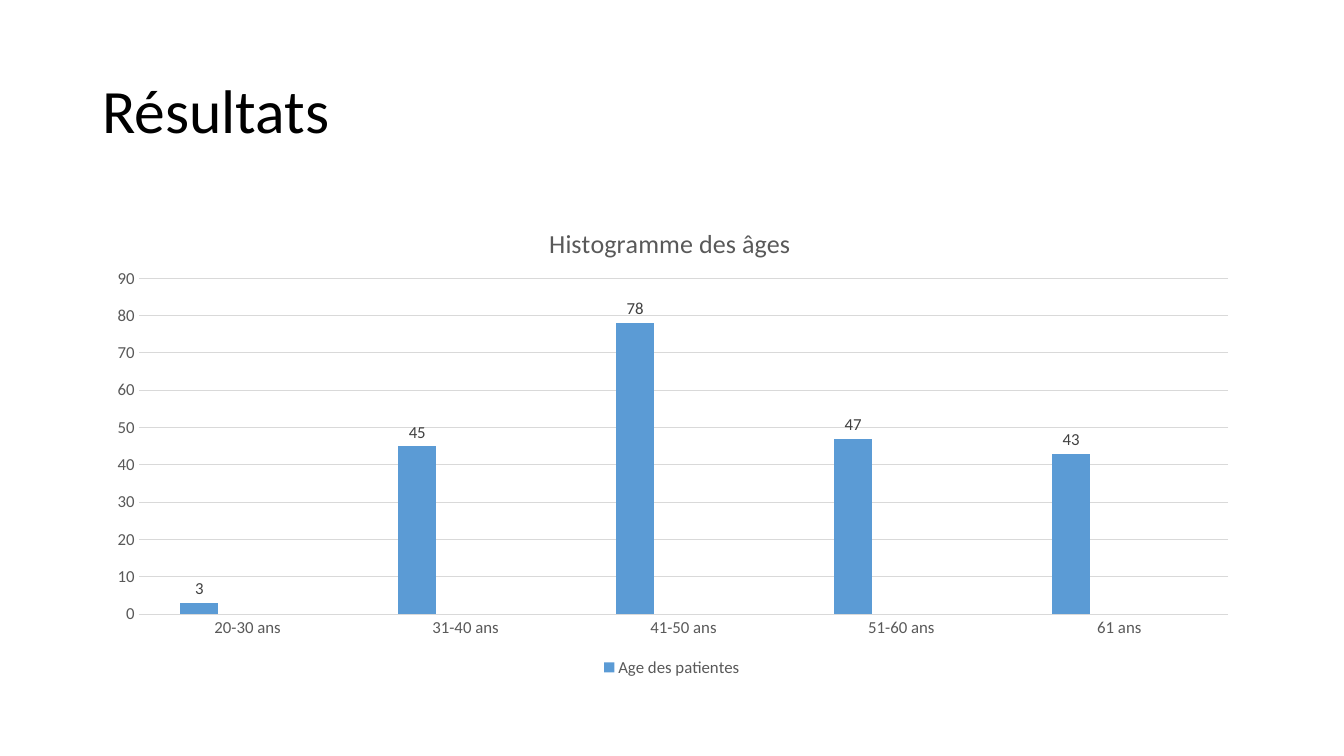
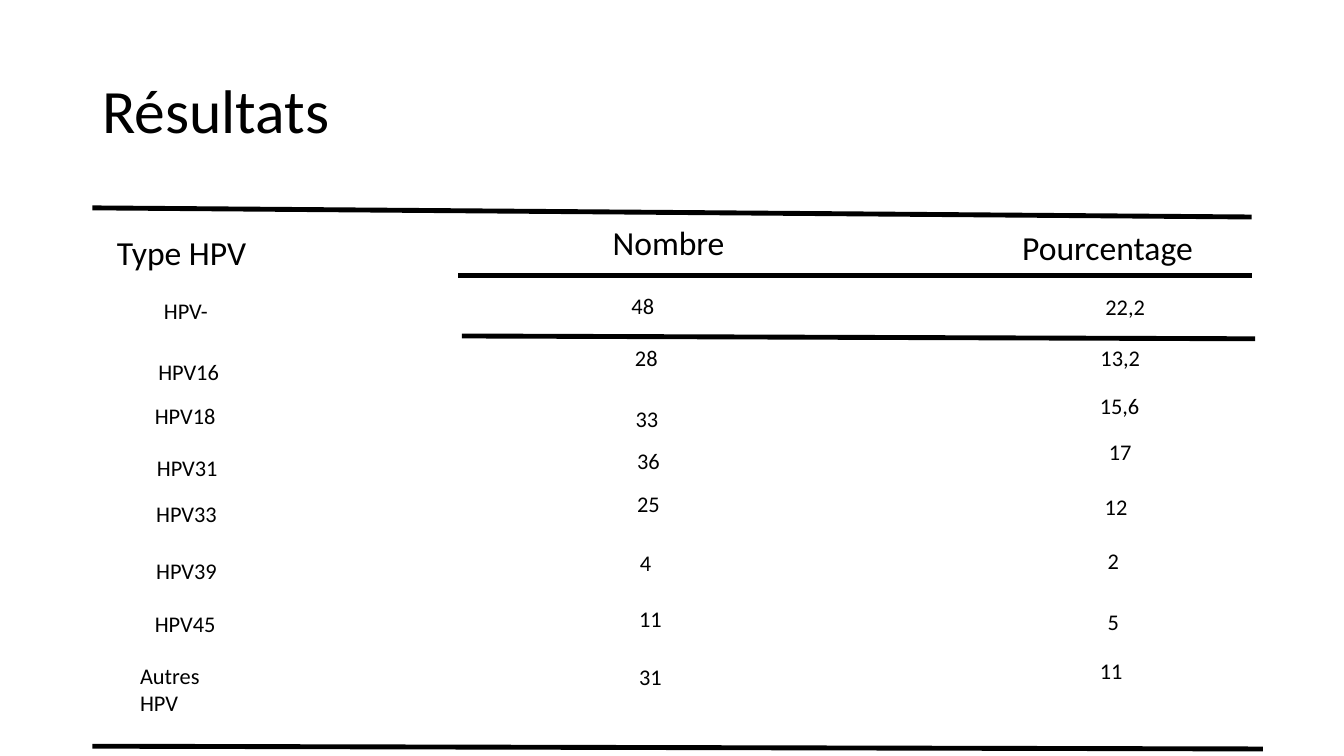
from lxml import etree
from pptx import Presentation
from pptx.chart.data import CategoryChartData
from pptx.dml.color import RGBColor
from pptx.enum.chart import XL_CHART_TYPE as ChartType
from pptx.enum.chart import XL_LABEL_POSITION as LabelPosition
from pptx.enum.chart import XL_LEGEND_POSITION as LegendPosition
from pptx.enum.chart import XL_TICK_MARK as TickMark
from pptx.enum.shapes import MSO_CONNECTOR as Connector
from pptx.enum.text import MSO_ANCHOR as Anchor
from pptx.enum.text import MSO_AUTO_SIZE as AutoSize
from pptx.enum.text import PP_ALIGN as Align
from pptx.oxml import parse_xml
from pptx.oxml.ns import nsdecls, qn
from pptx.util import Pt

# Shared style
FONT = "Calibri"
BLACK, GREY, DARK_GREY, GRID = "000000", "595959", "404040", "D9D9D9"
SERIES_COLOURS = ["5B9BD5", "ED7D31", "A5A5A5"]
LEFT, CONTENT_WIDTH = 66, 828
TITLE_ONLY = 5

# Age histogram
AGES = ["20-30 ans", "31-40 ans", "41-50 ans", "51-60 ans", "61 ans"]
PATIENTS = [3, 45, 78, 47, 43]

# HPV results, hand-placed: heading and values as (text, left, top)
HPV_COLUMNS = [
    (113, 66, ("Type HPV", 76.5, 162), [
        ("HPV-", 110, 209), ("HPV16", 106, 252), ("HPV18", 103.5, 283.5),
        ("HPV31", 105, 321), ("HPV33", 104.5, 353.5),
        ("HPV39", 104.5, 394.5), ("HPV45", 103.5, 432),
        ("Autres HPV", 93, 469.5)]),
    (101, 31, ("Nombre", 430.5, 155), [
        ("48", 444, 205), ("28", 446.5, 242.5), ("33", 447, 286),
        ("36", 448, 316), ("25", 448, 346.5), ("4", 450, 389),
        ("11", 449.5, 429), ("31", 449.5, 470)]),
    (143, 43, ("Pourcentage", 723, 158.5), [
        ("22,2", 782.5, 206), ("13,2", 779, 242.5), ("15,6", 778.5, 276.5),
        ("17", 785, 309.5), ("12", 782, 348.5), ("2", 784, 387.5),
        ("5", 784, 430.5), ("11", 778.5, 466)]),
]
RULES = [
    (LEFT, 148.5, 894, 155),
    (327.5, 196.5, 894, 196.5),
    (330, 240, 896.5, 242),
    (LEFT, 533, 902, 535),
]


def rgb(hex_colour):
    return RGBColor.from_string(hex_colour)


def style_font(font, size, colour):
    font.name, font.size, font.bold = FONT, Pt(size), False
    font.color.rgb = rgb(colour)


def add_run(paragraph, text, size, colour=BLACK):
    run = paragraph.add_run()
    run.text = text
    style_font(run.font, size, colour)


def add_titled_slide(prs, heading):
    slide = prs.slides.add_slide(prs.slide_layouts[TITLE_ONLY])
    title = slide.shapes.title
    title.left, title.top = Pt(LEFT), Pt(28.75)
    title.width, title.height = Pt(CONTENT_WIDTH), Pt(104.4)
    frame = title.text_frame
    frame.vertical_anchor = Anchor.MIDDLE
    paragraph = frame.paragraphs[0]
    paragraph.alignment, paragraph.line_spacing = Align.LEFT, 0.9
    add_run(paragraph, heading, 44)
    return slide


def add_label(slide, text, left, top, width, height, size):
    frame = slide.shapes.add_textbox(
        Pt(left), Pt(top), Pt(width), Pt(height)).text_frame
    frame.word_wrap = False
    frame.auto_size = AutoSize.SHAPE_TO_FIT_TEXT
    add_run(frame.paragraphs[0], text, size)


def add_rule(slide, x1, y1, x2, y2):
    rule = slide.shapes.add_connector(
        Connector.STRAIGHT, Pt(x1), Pt(y1), Pt(x2), Pt(y2))
    rule.line.color.rgb = rgb(BLACK)
    rule.line.width = Pt(3.5)
    etree.SubElement(rule._element.spPr, qn("a:effectLst"))


def manual_layout(target="", **fractions):
    """Build a chart layout from fractions of the chart area."""
    inner = f'<c:layoutTarget val="{target}"/>' if target else ""
    modes = "".join(f'<c:{side}Mode val="edge"/>' for side in "xy")
    sizes = "".join(f'<c:{k} val="{v}"/>' for k, v in fractions.items())
    return parse_xml(f'<c:layout {nsdecls("c")}><c:manualLayout>{inner}'
                     f'{modes}{sizes}</c:manualLayout></c:layout>')


def replace_layout(parent, layout, index):
    for old in parent.findall(qn("c:layout")):
        parent.remove(old)
    parent.insert(index, layout)


def style_axes(chart):
    for axis in (chart.category_axis, chart.value_axis):
        axis.major_tick_mark = axis.minor_tick_mark = TickMark.NONE
        style_font(axis.tick_labels.font, 12, GREY)
    category_line = chart.category_axis.format.line
    category_line.color.rgb, category_line.width = rgb(GRID), Pt(0.75)
    scale = chart.value_axis
    scale.minimum_scale, scale.maximum_scale, scale.major_unit = 0, 90, 10
    scale.format.line.fill.background()
    grid_line = scale.major_gridlines.format.line
    grid_line.color.rgb, grid_line.width = rgb(GRID), Pt(0.75)


def style_legend(chart, hidden_series):
    chart.has_legend = True
    legend = chart.legend
    legend.position = LegendPosition.BOTTOM
    legend.include_in_layout = False
    style_font(legend.font, 12, GREY)
    for place, series in enumerate(hidden_series, 1):
        legend._element.insert(place, parse_xml(
            f'<c:legendEntry {nsdecls("c")}><c:idx val="{series}"/>'
            '<c:delete val="1"/></c:legendEntry>'))


def add_histogram(slide):
    ages = CategoryChartData()
    ages.categories = AGES
    ages.add_series("Age des patientes", PATIENTS)
    for name in ("Series 2", "Series 3"):
        ages.add_series(name, [None] * len(AGES))
    chart = slide.shapes.add_chart(
        ChartType.COLUMN_CLUSTERED, Pt(LEFT), Pt(144),
        Pt(CONTENT_WIDTH), Pt(342.7), ages).chart
    style_font(chart.font, 10, BLACK)

    # Heading and plot area
    chart.has_title = True
    heading = chart.chart_title
    add_run(heading.text_frame.paragraphs[0],
            "Histogramme des âges", 18.6, GREY)
    replace_layout(heading._element, manual_layout(x=0.39, y=0.04), 1)
    plot_area = chart._chartSpace.chart.plotArea
    replace_layout(plot_area, manual_layout(
        "inner", x=0.04, y=0.16, w=0.94, h=0.7), 0)

    # Columns
    plot = chart.plots[0]
    plot.gap_width, plot.overlap = 219, -27
    plot.vary_by_categories = False
    for series, colour in zip(plot.series, SERIES_COLOURS):
        series.format.fill.solid()
        series.format.fill.fore_color.rgb = rgb(colour)
    counts = plot.series[0].data_labels
    counts.show_value = True
    counts.position = LabelPosition.OUTSIDE_END
    style_font(counts.font, 12, DARK_GREY)

    style_axes(chart)
    style_legend(chart, hidden_series=(1, 2))


def add_hpv_results(slide):
    for ends in RULES:
        add_rule(slide, *ends)
    for heading_width, value_width, heading, values in HPV_COLUMNS:
        add_label(slide, *heading, heading_width, 36, 24)
        for value in values:
            add_label(slide, *value, value_width, 26.6, 16)


def main():
    prs = Presentation()
    prs.slide_width, prs.slide_height = Pt(960), Pt(540)
    for add_content in (add_histogram, add_hpv_results):
        add_content(add_titled_slide(prs, "Résultats"))
    prs.save("out.pptx")


if __name__ == "__main__":
    main()
